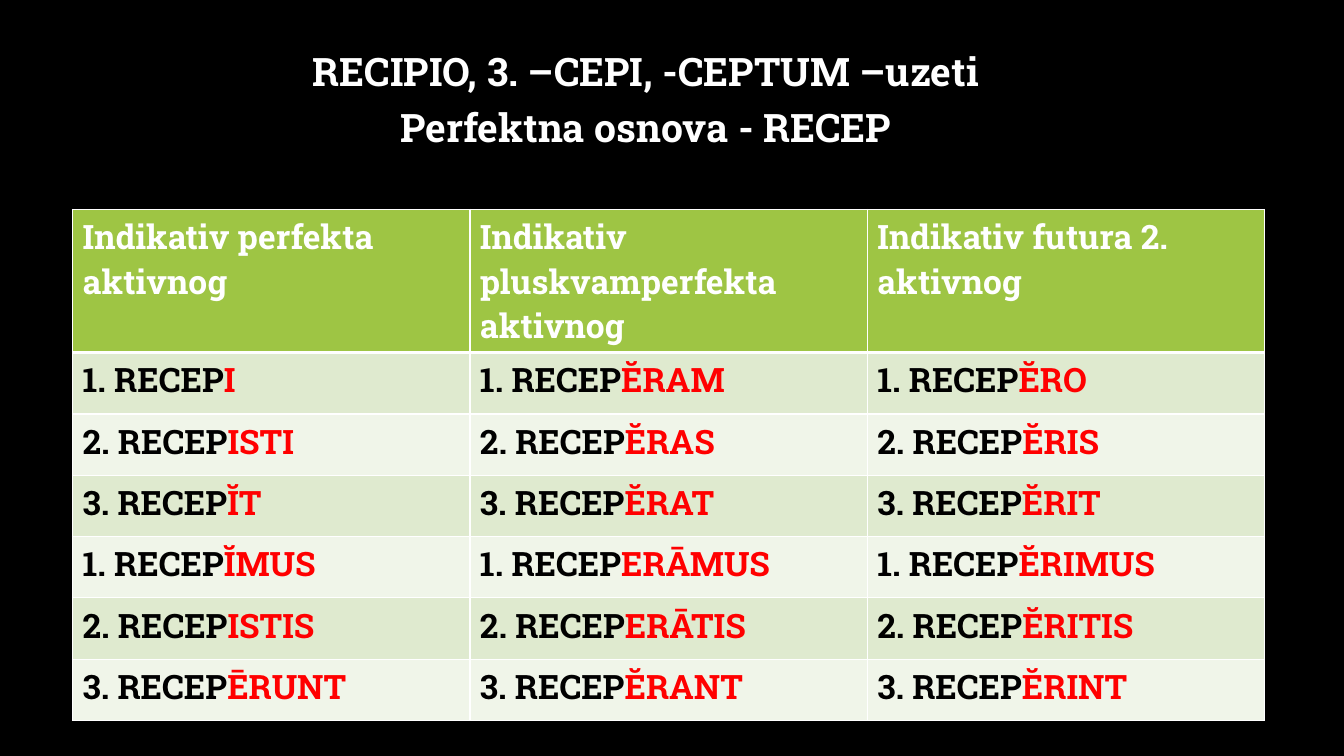
from dataclasses import dataclass

from lxml import etree
from pptx import Presentation
from pptx import util as u
from pptx.dml.color import RGBColor
from pptx.enum import text
from pptx.oxml.ns import qn


@dataclass(frozen=True)
class Theme:
    """Colours, font and type sizes of the deck."""
    font: str = "Roboto Slab"
    back: str = "000000"
    light: str = "FFFFFF"
    dark: str = "000000"
    mark: str = "FF0000"
    head: str = "9EC544"
    bands: tuple = ("DFEACF", "F0F5E9")
    title: int = 28
    body: int = 24
    thin: int = 1
    thick: int = 3


def assign(item, values):
    """Set each attribute of the item from a dict."""
    for name, value in values.items():
        setattr(item, name, value)


class Deck:
    """Holds the theme and the current slide."""

    def __init__(self, theme):
        """Open a wide deck with one title slide."""
        self.theme = theme
        self.show = Presentation()
        assign(self.show, {"slide_width": u.Inches(13.33),
                           "slide_height": u.Inches(7.5)})
        self.slide = self.show.slides.add_slide(self.show.slide_layouts[5])
        self.paint(self.slide.background.fill, theme.back)

    def paint(self, fill, tint):
        """Give a solid colour to a fill."""
        fill.solid()
        fill.fore_color.rgb = RGBColor.from_string(tint)

    def place(self, left, top, width, height):
        """Turn shares of the slide into a box of lengths."""
        wide, high = self.show.slide_width, self.show.slide_height
        return [round(n) for n in
                (left * wide, top * high, width * wide, height * high)]

    def style(self, run, size, tint):
        """Format one run of text."""
        assign(run.font, {"name": self.theme.font, "size": u.Pt(size),
                          "bold": True})
        run.font.color.rgb = RGBColor.from_string(tint)

    def title(self, words, box):
        """Fill and move the title placeholder."""
        shape = self.slide.shapes.title
        assign(shape, dict(zip(("left", "top", "width", "height"),
                               self.place(*box))))
        frame = shape.text_frame
        assign(frame, {"word_wrap": True,
                       "auto_size": text.MSO_AUTO_SIZE.NONE,
                       "vertical_anchor": text.MSO_ANCHOR.BOTTOM})
        para = frame.paragraphs[0]
        para.text = words
        assign(para, {"alignment": text.PP_ALIGN.CENTER,
                      "line_spacing": 1.2, "space_before": u.Pt(10)})
        for run in para.runs:
            self.style(run, self.theme.title, self.theme.light)

    def border(self, cell, sides):
        """Draw the sides of a cell, given as widths in points."""
        props = cell._tc.get_or_add_tcPr()
        for side, width in sides.items():
            line = etree.SubElement(props, qn(f"a:ln{side}"),
                                    w=str(u.Pt(width)))
            fill = etree.SubElement(line, qn("a:solidFill"))
            etree.SubElement(fill, qn("a:srgbClr"), val=self.theme.light)

    def cell(self, cell, parts, tint, sides):
        """Write coloured parts into a cell."""
        self.border(cell, sides)
        self.paint(cell.fill, tint)
        para = cell.text_frame.paragraphs[0]
        for words, ink in parts:
            run = para.add_run()
            run.text = words
            self.style(run, self.theme.body, ink)

    def table(self, heads, stem, forms, box, share):
        """Build a table of verb forms under a row of headings."""
        look = self.theme
        place = self.place(*box)
        grid = self.slide.shapes.add_table(
            len(forms) + 1, len(heads), *place).table
        top = round(place[3] * share)
        for row in grid.rows:
            row.height = (place[3] - top) // len(forms)
        grid.rows[0].height = top
        sides = dict.fromkeys("LRTB", look.thin)
        for col, head in enumerate(heads):
            self.cell(grid.cell(0, col), [(head, look.light)], look.head,
                      {**sides, "B": look.thick})
        for row, ends in enumerate(forms):
            edge = sides if row else {**sides, "T": look.thick}
            for col, end in enumerate(ends):
                parts = [(f"{row % 3 + 1}. {stem}", look.dark),
                         (end, look.mark)]
                self.cell(grid.cell(row + 1, col), parts,
                          look.bands[row % 2], edge)


HEADS = ("Indikativ perfekta aktivnog",
         "Indikativ pluskvamperfekta aktivnog",
         "Indikativ futura 2. aktivnog")
FORMS = (("I", "ĔRAM", "ĔRO"),
         ("ISTI", "ĔRAS", "ĔRIS"),
         ("ĬT", "ĔRAT", "ĔRIT"),
         ("ĬMUS", "ERĀMUS", "ĔRIMUS"),
         ("ISTIS", "ERĀTIS", "ĔRITIS"),
         ("ĒRUNT", "ĔRANT", "ĔRINT"))


def main():
    """Build and save the slide."""
    deck = Deck(Theme())
    deck.title("RECIPIO, 3. –CEPI, -CEPTUM –uzeti\vPerfektna osnova - RECEP",
               (0.036, 0.041, 0.889, 0.165))
    deck.table(HEADS, "RECEP", FORMS, (0.054, 0.277, 0.887, 0.676), 0.28)
    deck.show.save("out.pptx")


if __name__ == "__main__":
    main()
